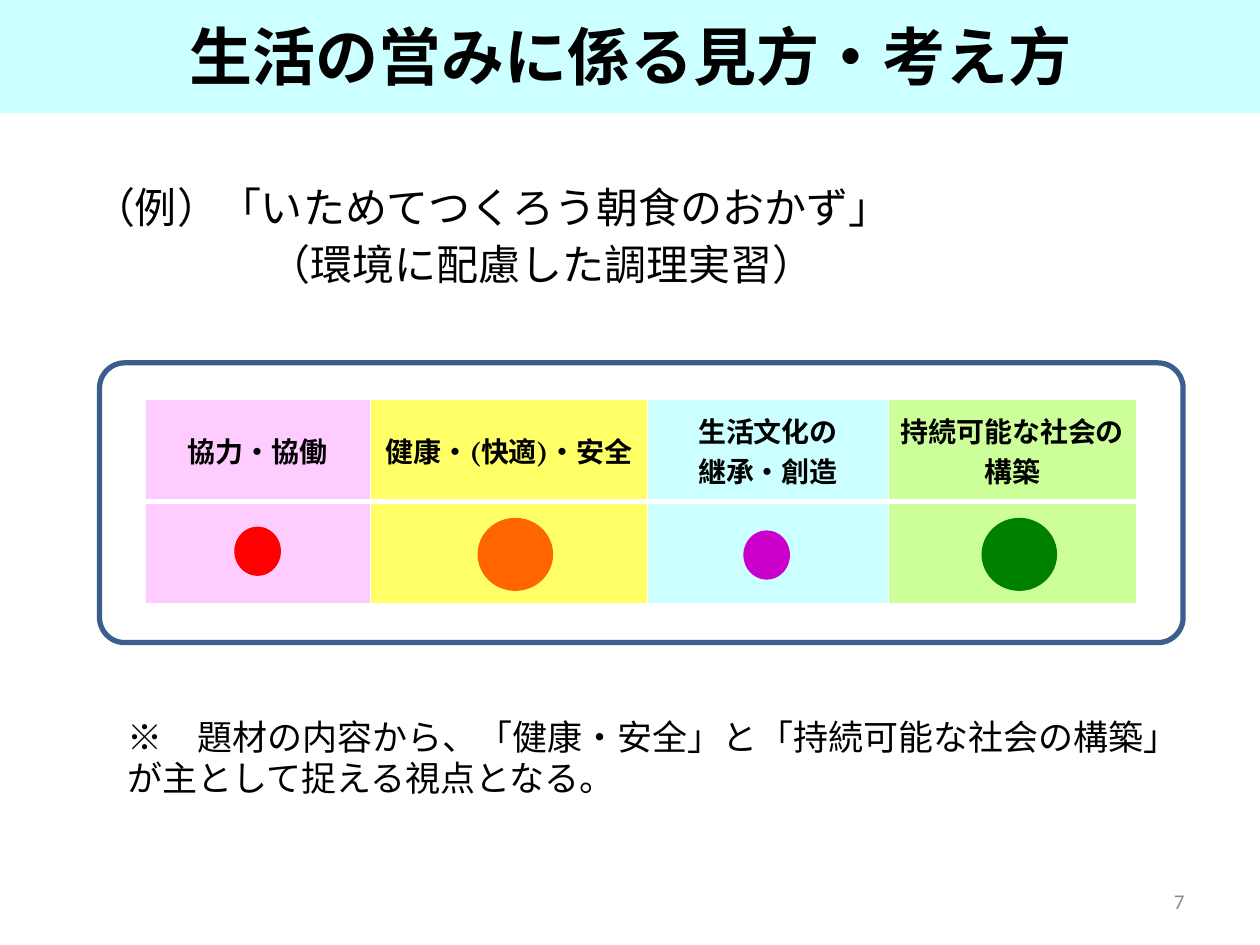
"""Build the slide on ways of viewing and thinking about daily life."""
import pptx
import pptx.dml.color
import pptx.enum.shapes
import pptx.enum.text
import pptx.oxml.ns
import pptx.util
from lxml import etree

Inches, Pt = pptx.util.Inches, pptx.util.Pt
ALIGN = pptx.enum.text.PP_ALIGN
MIDDLE = pptx.enum.text.MSO_ANCHOR.MIDDLE
KIND = pptx.enum.shapes.MSO_SHAPE
qn = pptx.oxml.ns.qn
GOTHIC = "Noto Sans CJK JP"

TITLE = "生活の営みに係る見方・考え方"
LESSON = ["（例）「いためてつくろう朝食のおかず」", "（環境に配慮した調理実習）"]
NOTE = ["※\u3000題材の内容から、「健康・安全」と「持続可能な社会の構築」が主として捉える視点となる。"]
PAGE = ["7"]
VIEWS = [
    (["協力・協働"], 1.79, "FFCCFF"),
    (["健康・(快適)・安全"], 2.2, "FFFF66"),
    (["生活文化の", "継承・創造"], 1.91, "CCFFFF"),
    (["持続可能な社会の構築"], 1.97, "CCFF99"),
]
SMALL, LARGE = (0.37, 0.39), (0.6, 0.58)
DOTS = [
    (1.86, 4.18, SMALL, "FF0000"),
    (3.79, 4.11, LARGE, "FF6600"),
    (5.9, 4.21, SMALL, "CC00CC"),
    (7.79, 4.11, LARGE, "008000"),
]
ROW = 0.81


def color(text):
    return pptx.dml.color.RGBColor.from_string(text)


def paint(item, tone):
    item.fill.solid()
    item.fill.fore_color.rgb = color(tone)


def box(item, left, top, width, height):
    item.left, item.top = Inches(left), Inches(top)
    item.width, item.height = Inches(width), Inches(height)


def write(frame, lines, size, name=GOTHIC, tone="000000", bold=False, align=ALIGN.LEFT):
    for i, line in enumerate(lines):
        para = frame.add_paragraph() if i else frame.paragraphs[0]
        para.text, para.alignment = line, align
        font = para.font
        font.size, font.bold, font.name = Pt(size), bold, name
        font.color.rgb = color(tone)
        base = para._p.pPr.find(qn("a:defRPr"))
        etree.SubElement(base, qn("a:ea"), typeface=GOTHIC)


def label(slide, place, lines, size, **style):
    item = slide.shapes.add_textbox(*map(Inches, place))
    item.text_frame.word_wrap = True
    write(item.text_frame, lines, size, **style)
    return item.text_frame


def edge(cell, side, width):
    line = etree.SubElement(cell._tc.get_or_add_tcPr(), qn("a:ln" + side), w=str(Pt(width)))
    fill = etree.SubElement(line, qn("a:solidFill"))
    etree.SubElement(fill, qn("a:srgbClr"), val="FFFFFF")


def grid(slide):
    total = sum(width for _, width, _ in VIEWS)
    place = map(Inches, (1.15, 3.17, total, 2 * ROW))
    table = slide.shapes.add_table(2, len(VIEWS), *place).table
    for col, (lines, width, tone) in enumerate(VIEWS):
        table.columns[col].width = Inches(width)
        for row in range(2):
            table.rows[row].height = Inches(ROW)
            cell = table.cell(row, col)
            for side in "LRTB":
                edge(cell, side, 3 if side == "TB"[1 - row] else 1)
            paint(cell, tone)
            cell.vertical_anchor = MIDDLE
            cell.margin_left = cell.margin_right = Inches(0.07)
            cell.margin_top = cell.margin_bottom = 0
        write(table.cell(0, col).text_frame, lines, 16, "Cambria", bold=True, align=ALIGN.CENTER)


def frame(slide):
    item = slide.shapes.add_shape(KIND.ROUNDED_RECTANGLE, *map(Inches, (0.79, 2.88, 8.6, 2.22)))
    item.adjustments[0] = 0.09
    item.shadow.inherit = False
    item.fill.background()
    item.line.color.rgb = color("3A5F8C")
    item.line.width = Pt(3)


def dots(slide):
    for left, top, size, tone in DOTS:
        item = slide.shapes.add_shape(KIND.OVAL, *map(Inches, (left, top, *size)))
        item.shadow.inherit = False
        paint(item, tone)
        item.line.fill.background()


def main():
    deck = pptx.Presentation()
    deck.slide_width, deck.slide_height = Inches(10), Inches(7.5)
    slide = deck.slides.add_slide(deck.slide_layouts[5])

    title = slide.shapes.title
    box(title, 0, -0.03, 10, 0.93)
    paint(title, "CCFFFF")
    title.text_frame.auto_size = pptx.enum.text.MSO_AUTO_SIZE.NONE
    title.text_frame.vertical_anchor = MIDDLE
    write(title.text_frame, [TITLE], 36, bold=True, align=ALIGN.CENTER)

    grid(slide)
    frame(slide)
    lesson = label(slide, (0.64, 1.39, 8.6, 0.98), LESSON, 24)
    second = lesson.paragraphs[1]
    second.line_spacing = Pt(32.6)
    second._p.pPr.set("marL", str(Inches(1.39)))
    dots(slide)
    page = label(slide, (7.17, 6.95, 2.33, 0.4), PAGE, 12,
                 name="Calibri", tone="8C8C8C", align=ALIGN.RIGHT)
    page.vertical_anchor = MIDDLE
    note = label(slide, (0.91, 5.64, 8.58, 0.77), NOTE, 20)
    note.paragraphs[0].line_spacing = Pt(23.4)
    deck.save("out.pptx")


if __name__ == "__main__":
    main()
